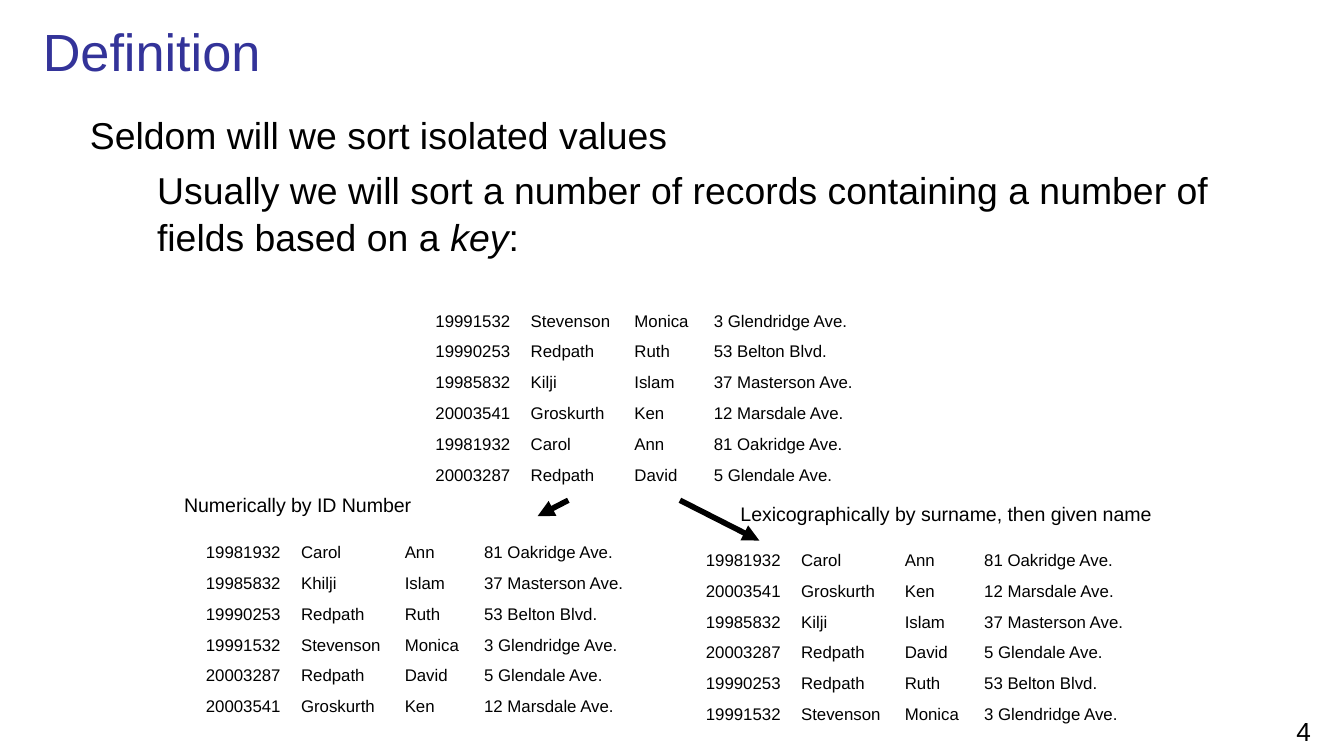
from pptx import Presentation
from pptx.dml.color import RGBColor
from pptx.enum.shapes import MSO_CONNECTOR
from pptx.enum.text import MSO_ANCHOR, MSO_AUTO_SIZE, PP_ALIGN
from pptx.oxml.ns import qn
from pptx.util import Cm, Pt
from lxml.etree import SubElement


def color(hex_string):
    return RGBColor.from_string(hex_string)


def write(paragraph, text, size, ink="000000", italic=False, align=PP_ALIGN.LEFT):
    """Append a formatted run to the paragraph."""
    paragraph.alignment = align
    run = paragraph.add_run()
    run.text = text
    run.font.name = "Arial"
    run.font.size = Pt(size)
    run.font.italic = italic
    run.font.color.rgb = color(ink)


presentation = Presentation()
presentation.slide_width = Cm(25.4)
presentation.slide_height = Cm(14.28)
slide = presentation.slides.add_slide(presentation.slide_layouts[6])

# Title
title = slide.shapes.add_textbox(Cm(0.56), Cm(0.2), Cm(24.74), Cm(1.5)).text_frame
title.word_wrap = True
title.vertical_anchor = MSO_ANCHOR.MIDDLE
write(title.paragraphs[0], "Definition", size=28, ink="333399")

# Body
body = slide.shapes.add_textbox(Cm(1.12), Cm(1.96), Cm(23.27), Cm(11.13)).text_frame
body.word_wrap = True
statement = body.paragraphs[0]
write(statement, "Seldom will we sort isolated values", size=20)
detail = body.add_paragraph()
detail.level = 1
write(detail, "Usually we will sort a number of records containing a number of "
              "fields based on a ", size=20)
write(detail, "key", size=20, italic=True)
write(detail, ":", size=20)
for paragraph, margin, indent in [(statement, 1.09, -0.76), (detail, 1.6, 0)]:
    paragraph.space_before = Pt(4)
    paragraph.line_spacing = 1.05
    properties = paragraph._p.get_or_add_pPr()
    properties.set("marL", str(Cm(margin)))
    properties.set("indent", str(Cm(indent)))

# The same records: unsorted, by ID number, and by surname then given name
records = [
    ("19991532", "Stevenson", "Monica", "3 Glendridge Ave."),
    ("19990253", "Redpath", "Ruth", "53 Belton Blvd."),
    ("19985832", "Kilji", "Islam", "37 Masterson Ave."),
    ("20003541", "Groskurth", "Ken", "12 Marsdale Ave."),
    ("19981932", "Carol", "Ann", "81 Oakridge Ave."),
    ("20003287", "Redpath", "David", "5 Glendale Ave."),
]
by_id = [(number, surname.replace("Kilji", "Khilji"), given, address)
         for number, surname, given, address in sorted(records)]
by_name = sorted(records, key=lambda record: record[1:3])

column_widths = [1.8, 1.96, 1.5, 3.15]
row_height = 0.57
for rows, left, top in [(records, 8.05, 5.79), (by_id, 3.71, 10.16), (by_name, 13.16, 10.31)]:
    table = slide.shapes.add_table(
        len(rows), len(column_widths), Cm(left), Cm(top),
        Cm(sum(column_widths)), Cm(row_height * len(rows))).table
    table.first_row = False
    table.horz_banding = False
    for column, width in zip(table.columns, column_widths):
        column.width = Cm(width)
    for row, record in zip(table.rows, rows):
        row.height = Cm(row_height)
        for cell, value in zip(row.cells, record):
            cell.fill.background()
            cell.margin_left = cell.margin_right = Cm(0.18)
            cell.margin_top = cell.margin_bottom = Cm(0.1)
            write(cell.text_frame.paragraphs[0], value, size=9)

# Arrows from the unsorted table to the sorted ones
for start_x, end_x, end_y in [(10.74, 10.16, 9.75), (12.85, 14.35, 10.21)]:
    arrow = slide.shapes.add_connector(
        MSO_CONNECTOR.STRAIGHT, Cm(start_x), Cm(9.45), Cm(end_x), Cm(end_y))
    arrow.line.color.rgb = color("000000")
    arrow.line.width = Pt(3)
    SubElement(arrow.line._get_or_add_ln(), qn("a:tailEnd"), type="triangle")
    SubElement(arrow._element.spPr, qn("a:effectLst"))

# Table captions
for caption, left, top, width in [
    ("Numerically by ID Number", 3.18, 9.19, 4.9),
    ("Lexicographically by surname, then given name", 13.67, 9.35, 8.43),
]:
    frame = slide.shapes.add_textbox(Cm(left), Cm(top), Cm(width), Cm(0.71)).text_frame
    frame.word_wrap = False
    frame.auto_size = MSO_AUTO_SIZE.SHAPE_TO_FIT_TEXT
    write(frame.paragraphs[0], caption, size=10.5, align=PP_ALIGN.CENTER)

# Page number
page = slide.shapes.add_textbox(Cm(23.88), Cm(13.39), Cm(1.52), Cm(0.76)).text_frame
page.word_wrap = True
write(page.paragraphs[0], "4", size=14, align=PP_ALIGN.CENTER)

presentation.save("out.pptx")
